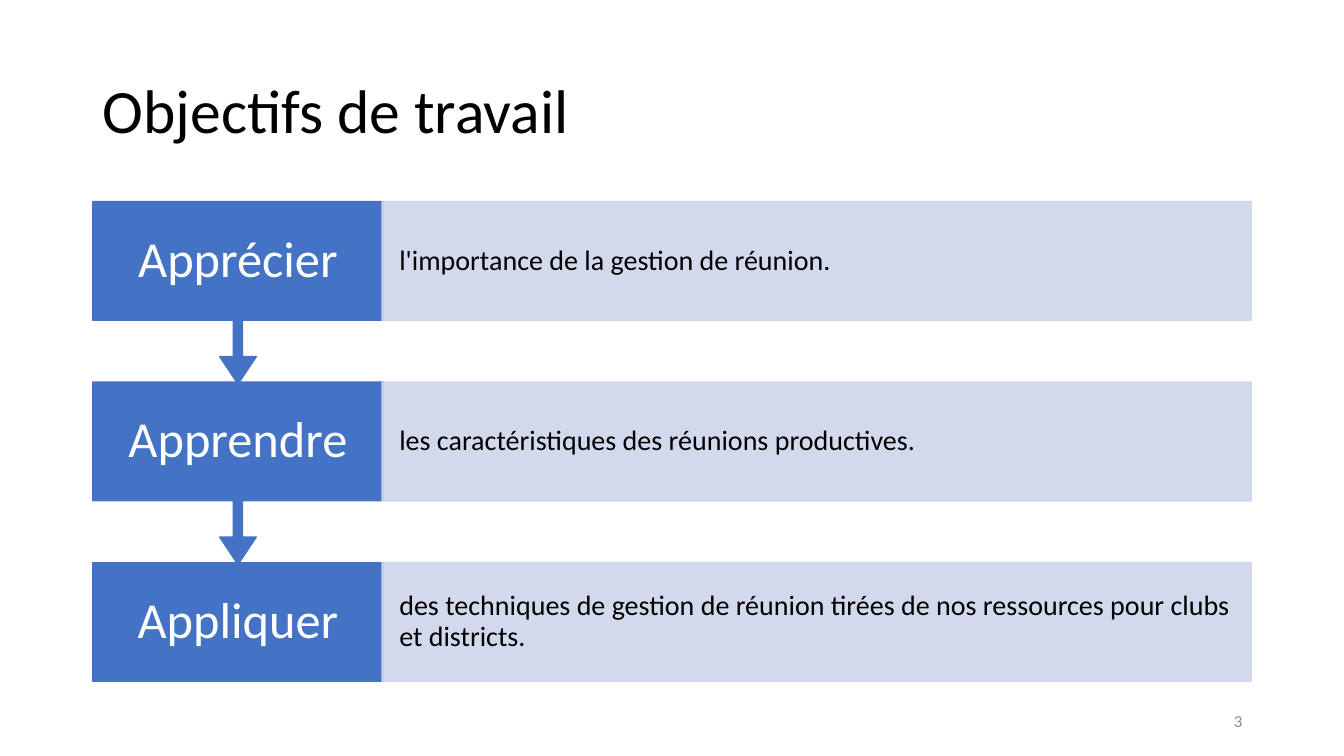
from dataclasses import dataclass

from lxml import etree
from pptx import Presentation
from pptx import util as u
from pptx.dml.color import RGBColor
from pptx.enum import shapes, text
from pptx.oxml.ns import qn

FONT = "Calibri"
BLUE, PALE, BLACK, WHITE, GREY = "4472C4", "CFD5EA", "000000", "FFFFFF", "8C8C8C"

# Layout of the rows, in inches
LEFT, TOP, PITCH = 0.92, 2.0, 1.79
VERB_WIDTH, DETAIL_LEFT, DETAIL_WIDTH = 2.88, 3.79, 8.62
ROW_HEIGHT, CALLOUT_HEIGHT = 1.18, 1.81


@dataclass
class Objective:
    verb: str
    detail: str


OBJECTIVES = [
    Objective("Apprécier", "l'importance de la gestion de réunion."),
    Objective("Apprendre", "les caractéristiques des réunions productives."),
    Objective("Appliquer", "des techniques de gestion de réunion tirées de nos "
                           "ressources pour clubs et districts."),
]


def colour(value: str) -> RGBColor:
    return RGBColor.from_string(value)


def write(box, words: str, *, size: float, ink: str = BLACK,
          align=text.PP_ALIGN.LEFT, spacing: float = 0.9,
          side: float = 0.1, edge: float = 0.05) -> None:
    """Put one formatted paragraph into a shape or text box."""
    frame = box.text_frame
    frame.word_wrap = True
    frame.vertical_anchor = text.MSO_ANCHOR.MIDDLE
    frame.margin_left = frame.margin_right = u.Inches(side)
    frame.margin_top = frame.margin_bottom = u.Inches(edge)
    para = frame.paragraphs[0]
    para.alignment = align
    para.line_spacing = spacing
    span = para.add_run()
    span.text = words
    span.font.name = FONT
    span.font.size = u.Pt(size)
    span.font.color.rgb = colour(ink)


def add_box(page, left: float, top: float, width: float, height: float):
    return page.shapes.add_textbox(*map(u.Inches, (left, top, width, height)))


def add_block(page, kind, left: float, top: float, width: float, height: float,
              paint: str, opacity: int = 100):
    """Draw a preset shape with fill and outline in one colour."""
    block = page.shapes.add_shape(kind, *map(u.Inches, (left, top, width, height)))
    block.shadow.inherit = False
    block.fill.solid()
    block.fill.fore_color.rgb = colour(paint)
    block.line.color.rgb = colour(paint)
    block.line.width = u.Pt(1)
    if opacity < 100:
        for tint in block.element.spPr.iter(qn("a:srgbClr")):
            etree.SubElement(tint, qn("a:alpha")).set("val", str(opacity * 1000))
    return block


def add_objective(page, objective: Objective, top: float, is_last: bool) -> None:
    # Verb block, with an arrow down to the next row
    if is_last:
        add_block(page, shapes.MSO_SHAPE.RECTANGLE,
                  LEFT, top, VERB_WIDTH, ROW_HEIGHT, BLUE)
    else:
        callout = add_block(page, shapes.MSO_SHAPE.UP_ARROW_CALLOUT,
                            LEFT, top, VERB_WIDTH, CALLOUT_HEIGHT, BLUE)
        callout.rotation = 180
        for index, value in enumerate((0.05, 0.1, 0.15, 0.65)):
            callout.adjustments[index] = value
    # The verb has its own box so that it stays upright
    write(add_box(page, LEFT, top, VERB_WIDTH, ROW_HEIGHT), objective.verb,
          size=36, ink=WHITE, align=text.PP_ALIGN.CENTER, side=0.2, edge=0.28)
    # Detail panel
    panel = add_block(page, shapes.MSO_SHAPE.RECTANGLE,
                      DETAIL_LEFT, top, DETAIL_WIDTH, ROW_HEIGHT, PALE, opacity=90)
    write(panel, objective.detail, size=20, side=0.17, edge=0.28)


def main() -> None:
    deck = Presentation()
    deck.slide_width, deck.slide_height = u.Inches(13.33), u.Inches(7.5)
    page = deck.slides.add_slide(deck.slide_layouts[6])

    # Title and page number
    write(add_box(page, 0.92, 0.4, 11.5, 1.45), "Objectifs de travail", size=44)
    write(add_box(page, 9.42, 6.95, 3, 0.4), "3", size=12, ink=GREY,
          align=text.PP_ALIGN.RIGHT, spacing=1.0)

    # Rows from the bottom up, so that each arrow lies over the row below
    last = len(OBJECTIVES) - 1
    for row in range(last, -1, -1):
        add_objective(page, OBJECTIVES[row], TOP + row * PITCH, row == last)

    deck.save("out.pptx")


if __name__ == "__main__":
    main()
